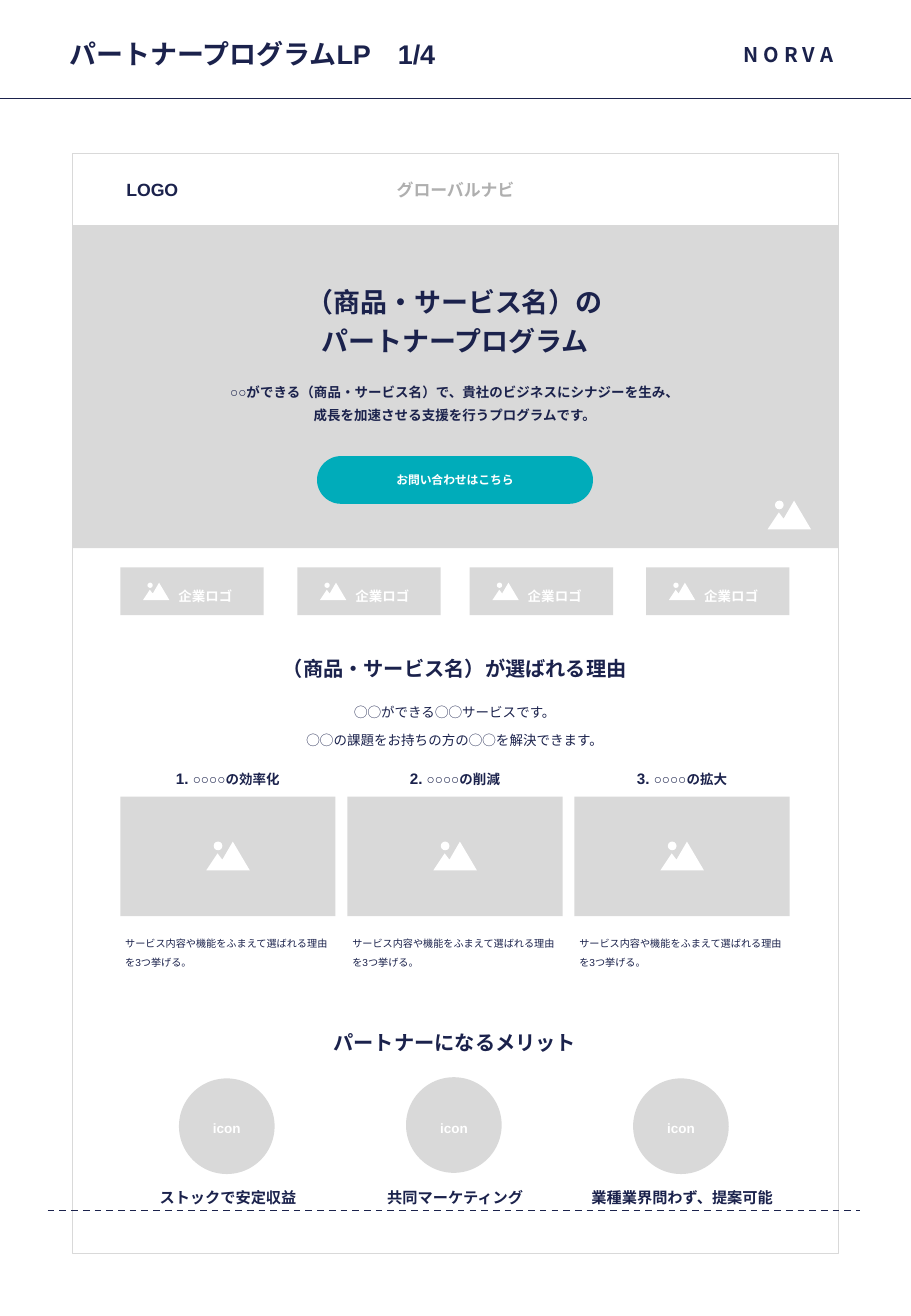
from dataclasses import dataclass

from lxml import etree
from pptx import Presentation
from pptx.dml.color import RGBColor
from pptx.enum.dml import MSO_LINE
from pptx.enum.shapes import MSO_CONNECTOR, MSO_SHAPE
from pptx.enum.text import MSO_ANCHOR, MSO_AUTO_SIZE, PP_ALIGN
from pptx.oxml.ns import qn
from pptx.util import Pt

LEFT, CENTER, RIGHT = PP_ALIGN.LEFT, PP_ALIGN.CENTER, PP_ALIGN.RIGHT
TOP, MIDDLE = MSO_ANCHOR.TOP, MSO_ANCHOR.MIDDLE
RECT, OVAL, PILL = MSO_SHAPE.RECTANGLE, MSO_SHAPE.OVAL, MSO_SHAPE.ROUNDED_RECTANGLE
STRAIGHT, DASH = MSO_CONNECTOR.STRAIGHT, MSO_LINE.DASH

COLORS = {"navy": "1B224C", "gray": "D9D9D9", "muted": "AFAFAF",
          "teal": "00ACBA", "white": "FFFFFF"}
ARIAL, NOTO = "Arial", "Noto Sans CJK JP"
PAGE_WIDTH, PAGE_HEIGHT = 540, 780.12
INSET = 2.9
FRAME_LEFT, FRAME_WIDTH = 43.2, 453.6
MARGIN = 71.3
CONTENT_WIDTH = 396.8
COLUMN_WIDTH = 127.6
COLUMN_PITCH = 134.6
LOGO_LEFTS = (71.3, 176.2, 278.4, 383)
LOGO_TOP = 336.4
MOUNTAINS = ((0.61, 0), (1, 1), (0, 1), (0.26, 0.41), (0.37, 0.63))


@dataclass(frozen=True)
class Box:
    left: float
    top: float
    width: float
    height: float

    def lengths(self) -> tuple:
        return Pt(self.left), Pt(self.top), Pt(self.width), Pt(self.height)


@dataclass(frozen=True)
class Style:
    size: float
    color: str = "navy"
    bold: bool = True
    font: str = ARIAL
    align: PP_ALIGN = CENTER
    anchor: MSO_ANCHOR = MIDDLE
    line_spacing: float = 1.0
    space_after: float = 0
    tracking: float = 0


@dataclass(frozen=True)
class Reason:
    number: str
    heading: str
    merit: str
    circle_top: float


REASONS = (
    Reason("1. ", "○○○○の効率化", "ストックで安定収益", 639.3),
    Reason("2. ", "○○○○の削減", "共同マーケティング", 638.6),
    Reason("3. ", "○○○○の拡大", "業種業界問わず、提案可能", 639.3),
)
REASON_TEXT = "サービス内容や機能をふまえて選ばれる理由を3つ挙げる。"

PAGE_TITLE = Style(16, align=LEFT, space_after=4)
BRAND = Style(12, font=NOTO, align=RIGHT, tracking=3)
NAVIGATION = Style(10, "muted", font=NOTO)
SITE_LOGO = Style(10.5, align=LEFT, space_after=2)
HERO = Style(16, space_after=4)
HERO_LEAD = Style(8, space_after=4)
BUTTON = Style(7, "white", font=NOTO)
SECTION = Style(12, space_after=4)
INTRO = Style(8, bold=False, anchor=TOP, line_spacing=1.5, space_after=2)
REASON_BODY = Style(6, bold=False, align=LEFT, anchor=TOP, line_spacing=1.5, space_after=2)
LABEL = Style(8, "white", anchor=TOP, line_spacing=1.5, space_after=2)
CAPTION = Style(9)


def rgb(name: str) -> RGBColor:
    return RGBColor.from_string(COLORS[name])


def write(shape, lines: tuple, style: Style) -> None:
    """Fill a shape with one paragraph per line, all in one style."""
    frame = shape.text_frame
    frame.auto_size = MSO_AUTO_SIZE.NONE
    frame.word_wrap = True
    frame.vertical_anchor = style.anchor
    frame.margin_left = frame.margin_right = Pt(INSET)
    frame.margin_top = frame.margin_bottom = Pt(INSET)
    frame.text = "\n".join(lines)
    for para in frame.paragraphs:
        para.alignment = style.align
        para.line_spacing = style.line_spacing
        para.space_before = Pt(0)
        para.space_after = Pt(style.space_after)
        font = para.font
        font.name, font.size, font.bold = style.font, Pt(style.size), style.bold
        font.color.rgb = rgb(style.color)
        properties = para._p.pPr.find(qn("a:defRPr"))
        etree.SubElement(properties, qn("a:ea"), typeface=style.font)
        if style.tracking:
            properties.set("spc", str(int(style.tracking * 100)))


def add_text(page, box: Box, style: Style, *lines: str):
    shape = page.shapes.add_textbox(*box.lengths())
    write(shape, lines, style)
    return shape


def paint(shape, fill: str = "", line: str = "") -> None:
    shape.shadow.inherit = False
    if fill:
        shape.fill.solid()
        shape.fill.fore_color.rgb = rgb(fill)
    else:
        shape.fill.background()
    if line:
        shape.line.color.rgb = rgb(line)
        shape.line.width = Pt(0.5)
    else:
        shape.line.fill.background()


def add_block(shapes, kind: MSO_SHAPE, box: Box, fill: str = "", line: str = ""):
    shape = shapes.add_shape(kind, *box.lengths())
    paint(shape, fill, line)
    return shape


def add_rule(page, left: float, right: float, top: float, width: float):
    rule = page.shapes.add_connector(STRAIGHT, Pt(left), Pt(top), Pt(right), Pt(top))
    rule.line.color.rgb = rgb("navy")
    rule.line.width = Pt(width)
    etree.SubElement(rule._element.spPr, qn("a:effectLst"))
    return rule


def add_image_mark(page, left: float, top: float, width: float) -> None:
    """Draw the mountains-and-sun mark of an image placeholder."""
    height = width * 0.66
    points = [(Pt(left + x * width), Pt(top + y * height)) for x, y in MOUNTAINS]
    group = page.shapes.add_group_shape()
    builder = group.shapes.build_freeform(*points[0])
    builder.add_line_segments(points[1:])
    paint(builder.convert_to_shape(), "white")
    sun = width * 0.2
    add_block(group.shapes, OVAL, Box(left + width * 0.17, top, sun, sun), "white")


def add_header(page) -> None:
    title = page.shapes.title
    title.left, title.top, title.width, title.height = Box(38.4, 17.6, 340, 28.3).lengths()
    write(title, ("パートナープログラムLP　1/4",), PAGE_TITLE)
    add_text(page, Box(397.4, 18, 99.4, 28.3), BRAND, "NORVA")
    add_rule(page, 0, PAGE_WIDTH, 58.3, 0.5)


def add_hero(page) -> None:
    add_block(page.shapes, RECT, Box(FRAME_LEFT, 133.4, FRAME_WIDTH, 191.6), "gray")
    navigation = add_block(page.shapes, RECT, Box(FRAME_LEFT, 91.2, FRAME_WIDTH, 42.2),
                           "white", "gray")
    write(navigation, ("グローバルナビ",), NAVIGATION)
    add_text(page, Box(72, 101.7, 59, 21), SITE_LOGO, "LOGO")
    add_text(page, Box(MARGIN, 169.2, CONTENT_WIDTH, 42.5), HERO,
             "（商品・サービス名）の", "パートナープログラム")
    add_text(page, Box(MARGIN, 225.2, CONTENT_WIDTH, 28.3), HERO_LEAD,
             "○○ができる（商品・サービス名）で、貴社のビジネスにシナジーを生み、",
             "成長を加速させる支援を行うプログラムです。")
    button = add_block(page.shapes, PILL, Box(187.9, 270.4, 163.6, 28.3), "teal")
    button.adjustments[0] = 0.5
    write(button, ("お問い合わせはこちら",), BUTTON)
    add_image_mark(page, 455, 296.8, 25.8)


def add_company_logo(page, left: float) -> None:
    add_block(page.shapes, RECT, Box(left, LOGO_TOP, 85, 28.3), "gray")
    add_image_mark(page, left + 13.5, LOGO_TOP + 9, 15.6)
    add_text(page, Box(left + 21, LOGO_TOP + 4.2, 59, 21), LABEL, "企業ロゴ")


def add_reason(page, reason: Reason, left: float) -> None:
    heading = add_text(page, Box(left, 455.6, COLUMN_WIDTH, 11.5), CAPTION, reason.number)
    span = heading.text_frame.paragraphs[0].add_run()
    span.text = reason.heading
    span.font.size = Pt(8)
    add_block(page.shapes, RECT, Box(left, 472.3, COLUMN_WIDTH, 70.8), "gray")
    add_image_mark(page, left + 51, 498.9, 25.8)
    add_text(page, Box(left, 549.4, COLUMN_WIDTH, 39.6), REASON_BODY, REASON_TEXT)


def add_merit(page, reason: Reason, left: float) -> None:
    add_block(page.shapes, OVAL, Box(left + 34.8, reason.circle_top, 56.7, 56.7), "gray")
    add_text(page, Box(left + 33.7, 656, 59, 21), LABEL, "icon")
    add_text(page, Box(left, 704.2, COLUMN_WIDTH, 11.5), CAPTION, reason.merit)


def main() -> None:
    deck = Presentation()
    deck.slide_width, deck.slide_height = Pt(PAGE_WIDTH), Pt(PAGE_HEIGHT)
    page = deck.slides.add_slide(deck.slide_layouts[5])
    add_block(page.shapes, RECT, Box(FRAME_LEFT, 91.2, FRAME_WIDTH, 652), line="gray")
    add_header(page)
    add_hero(page)
    for left in LOGO_LEFTS:
        add_company_logo(page, left)
    add_text(page, Box(MARGIN, 382.3, CONTENT_WIDTH, 28.3), SECTION,
             "（商品・サービス名）が選ばれる理由")
    add_text(page, Box(MARGIN, 409.7, CONTENT_WIDTH, 39.6), INTRO,
             "◯◯ができる◯◯サービスです。", "◯◯の課題をお持ちの方の◯◯を解決できます。")
    add_text(page, Box(MARGIN, 604, CONTENT_WIDTH, 28.3), SECTION, "パートナーになるメリット")
    for index, reason in enumerate(REASONS):
        left = MARGIN + index * COLUMN_PITCH
        add_reason(page, reason, left)
        add_merit(page, reason, left)
    add_rule(page, 28.3, 509.8, 717.6, 1).line.dash_style = DASH
    deck.save("out.pptx")


if __name__ == "__main__":
    main()
